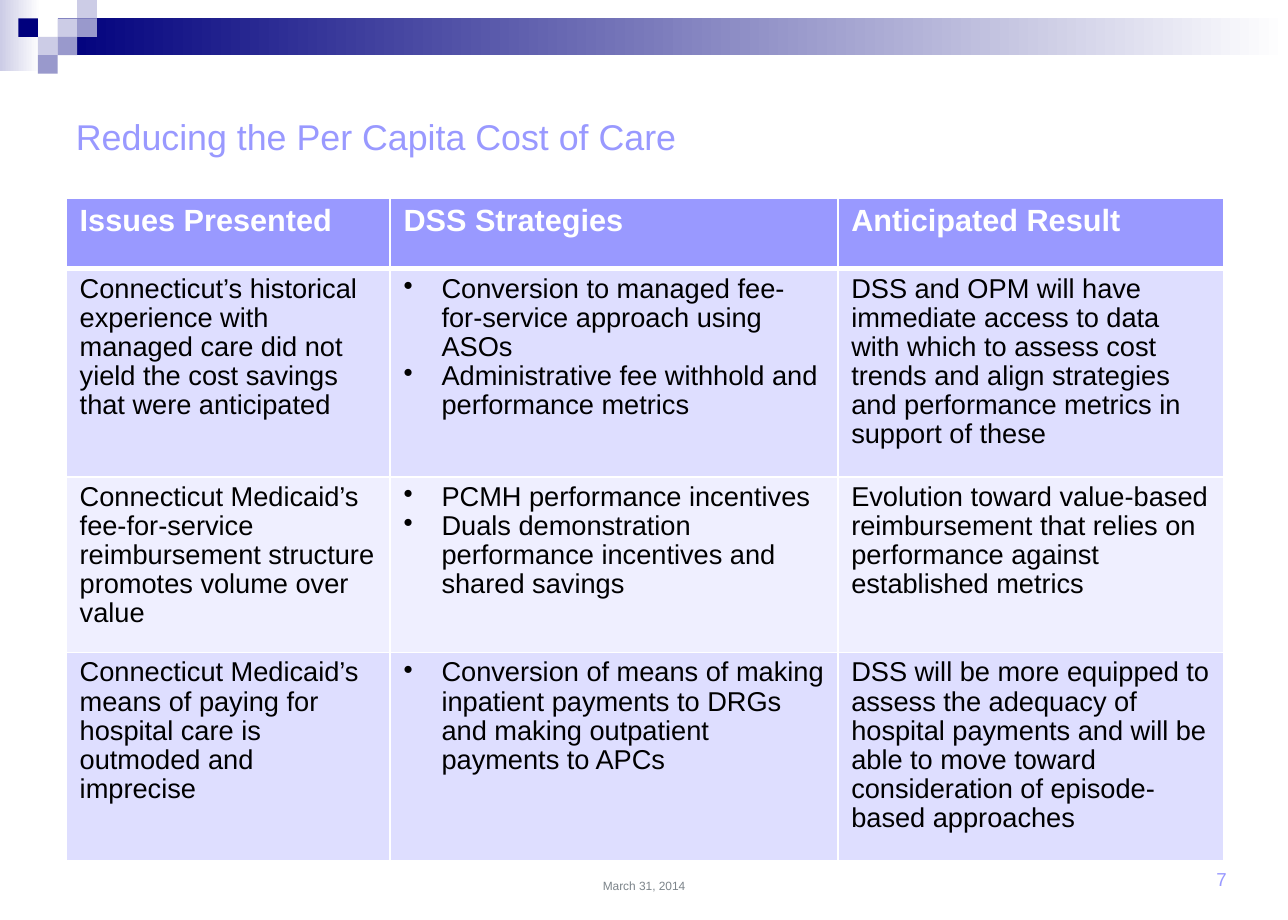
"""Build the slide on reducing the per capita cost of care."""
from dataclasses import dataclass

from lxml import etree
from pptx import Presentation
from pptx.dml.color import RGBColor
from pptx.enum.shapes import MSO_SHAPE
from pptx.enum.text import MSO_ANCHOR, PP_ALIGN
from pptx.oxml.ns import qn
from pptx.slide import Slide
from pptx.table import _Cell
from pptx.text.text import TextFrame
from pptx.util import Pt

RECTANGLE = MSO_SHAPE.RECTANGLE
MIDDLE, BOTTOM = MSO_ANCHOR.MIDDLE, MSO_ANCHOR.BOTTOM
LEFT, CENTER, RIGHT = PP_ALIGN.LEFT, PP_ALIGN.CENTER, PP_ALIGN.RIGHT
EMU_PER_PX = 9144
BLANK_LAYOUT = 6


@dataclass(frozen=True)
class Theme:
    font: str = "Arial"
    navy: str = "00007D"
    pale: str = "CCCCE6"
    muted: str = "9999CC"
    accent: str = "9999FF"
    white: str = "FFFFFF"
    black: str = "000000"
    grey: str = "7C848A"
    bands: tuple[str, str] = ("DEDEFF", "EFEFFF")
    title_size: int = 21
    header_size: int = 18
    body_size: int = 16
    number_size: int = 11
    date_size: int = 7
    line_spacing: float = 0.96
    thin_border: int = 1
    thick_border: int = 3


@dataclass(frozen=True)
class Box:
    left: int
    top: int
    width: int
    height: int

    def emu(self) -> tuple[int, int, int, int]:
        return px(self.left), px(self.top), px(self.width), px(self.height)


@dataclass(frozen=True)
class TextStyle:
    size: int
    color: str
    bold: bool = False
    alignment: PP_ALIGN = LEFT


@dataclass(frozen=True)
class Label:
    text: str
    box: Box
    style: TextStyle
    anchor: MSO_ANCHOR
    inset_top: int = 5


@dataclass(frozen=True)
class Square:
    column: int
    row: int
    color: str


THEME = Theme()
BARS = [
    (Box(0, 0, 33, 58), THEME.pale),
    (Box(47, 15, 1003, 30), THEME.navy),
]
SQUARES = [
    Square(2, 1, THEME.pale),
    Square(3, 0, THEME.pale),
    Square(3, 1, THEME.muted),
    Square(1, 2, THEME.pale),
    Square(0, 1, THEME.navy),
    Square(2, 2, THEME.muted),
    Square(1, 3, THEME.muted),
]
SQUARE_LEFT, SQUARE_WIDTH, SQUARE_HEIGHT = 15, 16, 15
LABELS = [
    Label("Reducing the Per Capita Cost of Care", Box(52, 71, 945, 83),
          TextStyle(THEME.title_size, THEME.accent), MIDDLE),
    Label("March 31, 2014", Box(359, 683, 332, 50),
          TextStyle(THEME.date_size, THEME.grey, alignment=CENTER), BOTTOM),
    Label("7", Box(961, 713, 49, 18),
          TextStyle(THEME.number_size, THEME.accent, alignment=RIGHT), BOTTOM, inset_top=0),
]
TABLE_BOX = Box(54, 162, 944, 540)
COLUMN_WIDTHS = [264, 365, 315]
ROW_HEIGHTS = [57, 170, 143, 170]
STRATEGY_COLUMN = 1
BULLET_INDENT = 31
HEADER_STYLE = TextStyle(THEME.header_size, THEME.white, bold=True)
BODY_STYLE = TextStyle(THEME.body_size, THEME.black)
TABLE_ROWS = [
    [["Issues Presented"], ["DSS Strategies"], ["Anticipated Result"]],
    [["Connecticut’s historical experience with managed care did not yield the cost savings "
      "that were anticipated"],
     ["Conversion to managed fee-for-service approach using ASOs",
      "Administrative fee withhold and performance metrics"],
     ["DSS and OPM will have immediate access to data with which to assess cost trends and "
      "align strategies and performance metrics in support of these"]],
    [["Connecticut Medicaid’s fee-for-service reimbursement structure promotes volume over value"],
     ["PCMH performance incentives",
      "Duals demonstration performance incentives and shared savings"],
     ["Evolution toward value-based reimbursement that relies on performance against "
      "established metrics"]],
    [["Connecticut Medicaid’s means of paying for hospital care is outmoded and imprecise"],
     ["Conversion of means of making inpatient payments to DRGs and making outpatient "
      "payments to APCs"],
     ["DSS will be more equipped to assess the adequacy of hospital payments and will be able "
      "to move toward consideration of episode-based approaches"]],
]


def px(length: int) -> int:
    return length * EMU_PER_PX


def rgb(color: str) -> RGBColor:
    return RGBColor.from_string(color)


def draw_rectangle(slide: Slide, box: Box, color: str, fade: bool = False) -> None:
    shape = slide.shapes.add_shape(RECTANGLE, *box.emu())
    shape.shadow.inherit = False
    shape.line.fill.background()
    if fade:
        shape.fill.gradient()
        shape.fill.gradient_angle = 0
        for stop, position, stop_color in zip(
                shape.fill.gradient_stops, (0, 1), (color, THEME.white)):
            stop.position = position
            stop.color.rgb = rgb(stop_color)
    else:
        shape.fill.solid()
        shape.fill.fore_color.rgb = rgb(color)


def write_text(frame: TextFrame, text: str, style: TextStyle, bulleted: bool = False) -> None:
    frame.text = text
    frame.word_wrap = True
    for paragraph in frame.paragraphs:
        paragraph.alignment = style.alignment
        paragraph.line_spacing = THEME.line_spacing
        if bulleted:
            properties = paragraph._p.get_or_add_pPr()
            properties.set("marL", str(px(BULLET_INDENT)))
            properties.set("indent", str(-px(BULLET_INDENT)))
            etree.SubElement(properties, qn("a:buChar"), char="•")
        for run in paragraph.runs:
            run.font.name = THEME.font
            run.font.size = Pt(style.size)
            run.font.bold = style.bold
            run.font.color.rgb = rgb(style.color)


def draw_label(slide: Slide, label: Label) -> None:
    frame = slide.shapes.add_textbox(*label.box.emu()).text_frame
    frame.vertical_anchor = label.anchor
    frame.margin_top = px(label.inset_top)
    write_text(frame, label.text, label.style)


def set_borders(cell: _Cell, row: int) -> None:
    top = THEME.thick_border if row == 1 else THEME.thin_border
    bottom = THEME.thick_border if row == 0 else THEME.thin_border
    widths = {"lnL": THEME.thin_border, "lnR": THEME.thin_border, "lnT": top, "lnB": bottom}
    properties = cell._tc.get_or_add_tcPr()
    for side, width in widths.items():
        line = etree.SubElement(properties, qn(f"a:{side}"), w=str(Pt(width)))
        fill = etree.SubElement(line, qn("a:solidFill"))
        etree.SubElement(fill, qn("a:srgbClr"), val=THEME.white)


def draw_table(slide: Slide) -> None:
    table = slide.shapes.add_table(
        len(ROW_HEIGHTS), len(COLUMN_WIDTHS), *TABLE_BOX.emu()).table
    for column, width in zip(table.columns, COLUMN_WIDTHS):
        column.width = px(width)
    for row, height in zip(table.rows, ROW_HEIGHTS):
        row.height = px(height)
    for row_index, row_texts in enumerate(TABLE_ROWS):
        is_header = row_index == 0
        color = THEME.accent if is_header else THEME.bands[(row_index - 1) % 2]
        for column_index, lines in enumerate(row_texts):
            cell = table.cell(row_index, column_index)
            cell.margin_left = cell.margin_right = px(11)
            cell.margin_top = cell.margin_bottom = px(5)
            set_borders(cell, row_index)
            cell.fill.solid()
            cell.fill.fore_color.rgb = rgb(color)
            write_text(cell.text_frame, "\n".join(lines),
                       HEADER_STYLE if is_header else BODY_STYLE,
                       bulleted=column_index == STRATEGY_COLUMN and not is_header)


def main() -> None:
    presentation = Presentation()
    presentation.slide_width, presentation.slide_height = px(1050), px(750)
    slide = presentation.slides.add_slide(presentation.slide_layouts[BLANK_LAYOUT])
    for box, color in BARS:
        draw_rectangle(slide, box, color, fade=True)
    for square in SQUARES:
        box = Box(SQUARE_LEFT + square.column * SQUARE_WIDTH, square.row * SQUARE_HEIGHT,
                  SQUARE_WIDTH, SQUARE_HEIGHT)
        draw_rectangle(slide, box, square.color)
    draw_table(slide)
    for label in LABELS:
        draw_label(slide, label)
    presentation.save("out.pptx")


if __name__ == "__main__":
    main()
